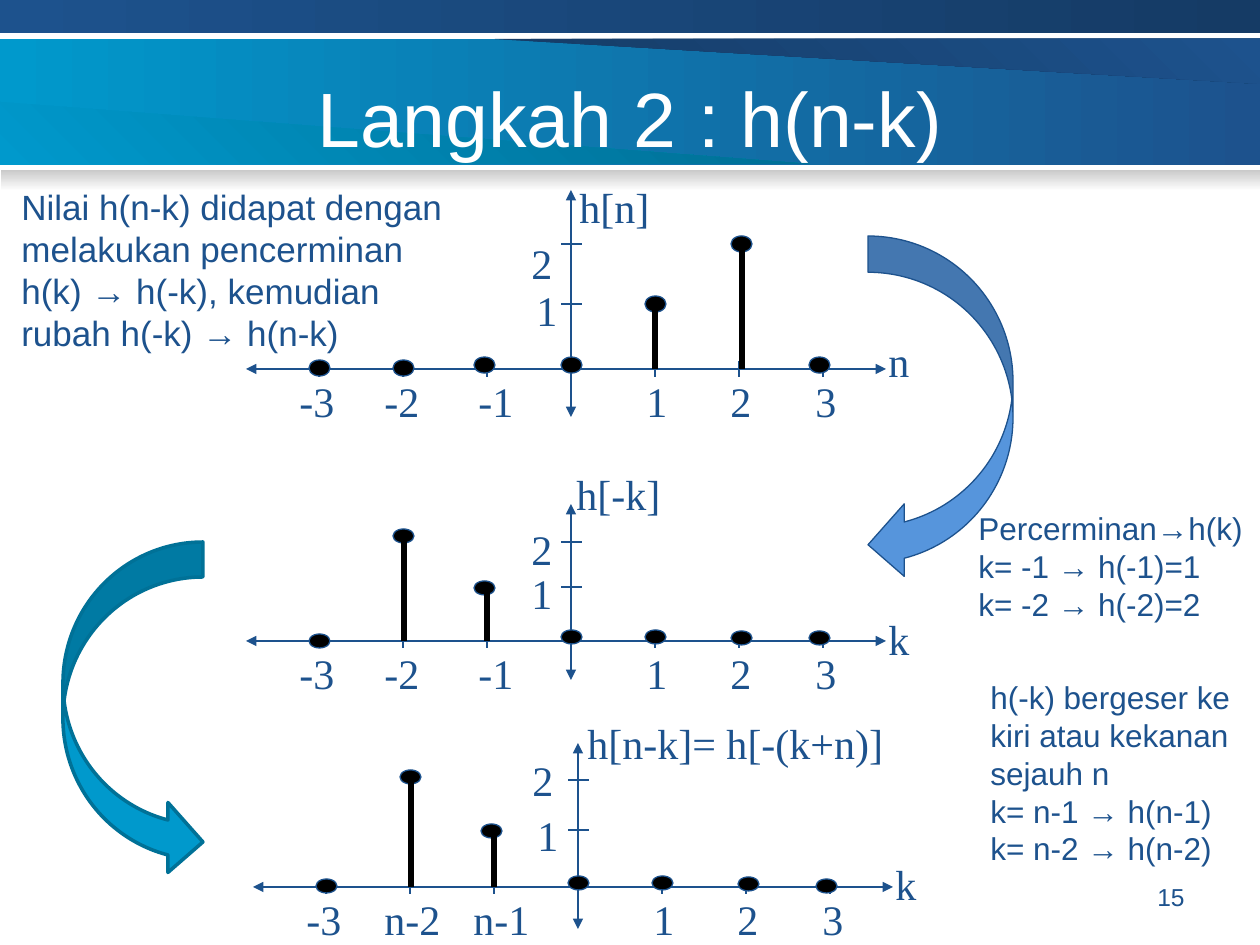
"""Build the slide on mirroring and shifting h(k) into h(n-k)."""
from lxml import etree
from pptx import Presentation
from pptx.dml.color import RGBColor
from pptx.enum.shapes import MSO_CONNECTOR, MSO_SHAPE
from pptx.enum.text import MSO_ANCHOR, MSO_AUTO_SIZE, PP_ALIGN
from pptx.oxml.ns import qn
from pptx.util import Emu, Pt

SCALE = 914400 / 126
NAVY = RGBColor(0x1D, 0x52, 0x8D)
DEEP = RGBColor(0x15, 0x3B, 0x65)
CYAN = RGBColor(0x00, 0x99, 0xCC)
TEAL = RGBColor(0x00, 0x6D, 0x92)
EDGE = RGBColor(0x00, 0x71, 0x97)
SKY = RGBColor(0x56, 0x95, 0xDC)
GREY = RGBColor(0xCA, 0xCA, 0xCA)
WHITE = RGBColor(0xFF, 0xFF, 0xFF)
BLACK = RGBColor(0x00, 0x00, 0x00)
SERIF = "Times New Roman"

deck = Presentation()
deck.slide_width, deck.slide_height = Emu(9144000), Emu(6858000)
page = deck.slides.add_slide(deck.slide_layouts[6])
shapes = page.shapes


def add_text(lines, area, size=24, font=SERIF, color=NAVY, align=PP_ALIGN.LEFT,
             anchor=MSO_ANCHOR.TOP):
    box = shapes.add_textbox(*[Emu(round(v * SCALE)) for v in area])
    frame = box.text_frame
    frame.word_wrap = True
    frame.vertical_anchor = anchor
    if anchor == MSO_ANCHOR.TOP:
        frame.auto_size = MSO_AUTO_SIZE.SHAPE_TO_FIT_TEXT
    frame.text = lines
    for para in frame.paragraphs:
        para.alignment = align
        para.font.size = Pt(size)
        para.font.name = font
        para.font.color.rgb = color


def add_line(ends, color=NAVY, width=0.75, arrows=False):
    line = shapes.add_connector(MSO_CONNECTOR.STRAIGHT,
                                *[Emu(round(v * SCALE)) for v in ends])
    line.line.color.rgb = color
    line.line.width = Pt(width)
    props = line._element.spPr
    if arrows:
        for tag in ("a:headEnd", "a:tailEnd"):
            etree.SubElement(props.find(qn("a:ln")), qn(tag), type="triangle")
    etree.SubElement(props, qn("a:effectLst"))


bands = [
    ([(0, 39), (1261, 39), (1261, 165), (0, 165)], CYAN, NAVY, 0),
    ([(1237, 39), (495, 39), (1261, 84), (1261, 39)], DEEP, NAVY, 45),
    ([(24, 164), (810, 164), (0, 102), (0, 164)], CYAN, TEAL, 45),
    ([(0, 0), (1260, 0), (1260, 33), (0, 33)], NAVY, DEEP, 0),
    ([(1, 170), (1260, 170), (1260, 191), (1, 191)], GREY, WHITE, 270),
]
for points, start, end, angle in bands:
    if points[0][0] == points[3][0]:
        (left, top), (right, bottom) = points[0], points[2]
        band = shapes.add_shape(MSO_SHAPE.RECTANGLE, *[
            Emu(round(v * SCALE)) for v in (left, top, right - left, bottom - top)])
    else:
        outline = shapes.build_freeform(*points[0], scale=SCALE)
        outline.add_line_segments(points[1:], close=True)
        band = outline.convert_to_shape()
    band.shadow.inherit = False
    band.line.fill.background()
    band.fill.gradient()
    band.fill.gradient_angle = angle
    for stop, color, position in zip(band.fill.gradient_stops, (start, end), (0, 1)):
        stop.color.rgb = color
        stop.position = position

add_text("Langkah 2 : h(n-k)", (63, 38, 1134, 157), 44, "Arial", WHITE,
         PP_ALIGN.CENTER, MSO_ANCHOR.MIDDLE)
add_text("15", (903, 876, 294, 50), 14, "Arial", align=PP_ALIGN.RIGHT)

arrows = [
    (MSO_SHAPE.CURVED_RIGHT_ARROW, (63, 542, 140, 335), CYAN, EDGE, 2),
    (MSO_SHAPE.CURVED_LEFT_ARROW, (868, 236, 145, 345), SKY, NAVY, 0.75),
]
for kind, area, fill, edge, width in arrows:
    arrow = shapes.add_shape(kind, *[Emu(round(v * SCALE)) for v in area])
    arrow.shadow.inherit = False
    arrow.fill.solid()
    arrow.fill.fore_color.rgb = fill
    arrow.line.color.rgb = edge
    arrow.line.width = Pt(width)

STEP = 84
LABEL_WIDTHS = {1: 42, 2: 63, 3: 88}
DOT_OFFSETS = (-262, -178, -97, -10, 74, 160, 238)
plots = [
    dict(origin=571, axis=369, top=190, bottom=417, height=48, dot=16,
         title=("h[n]", 567, 175, 105), name=("n", 329),
         negatives=[("-2", -199), ("-1", -105)],
         values=[("1", 304, 524, 278), ("2", 244, 519, 231)],
         dots=(360, 360, 357, 357, 296, 236, 357),
         stems=[(84, 304), (171, 247)]),
    dict(origin=571, axis=641, top=504, bottom=680, height=40, dot=14,
         title=("h[-k]", 564, 462, 126), name=("k", 607),
         negatives=[("-2", -199), ("-1", -105)],
         values=[("1", 587, 519, 561), ("2", 542, 519, 517)],
         dots=(634, 529, 581, 630, 630, 631, 631),
         stems=[(-167, 534), (-84, 586)]),
    dict(origin=578, axis=887, top=743, bottom=929, height=42, dot=14,
         title=("h[n-k]= h[-(k+n)]", 575, 711, 352), name=("k", 852),
         negatives=[("n-2", -206), ("n-1", -117)],
         values=[("1", 830, 525, 803), ("2", 780, 520, 748)],
         dots=(879, 770, 824, 876, 876, 877, 879),
         stems=[(-167, 775), (-84, 830)]),
]
for plot in plots:
    origin, axis, height = plot["origin"], plot["axis"], plot["height"]
    title, left, top, width = plot["title"]
    add_text(title, (left, top, width, height))
    name, top = plot["name"]
    add_text(name, (origin + 305, top, 42, height))
    add_line((origin - 325, axis, origin + 315, axis), arrows=True)
    add_line((origin, plot["top"], origin, plot["bottom"]), arrows=True)
    for k in (-3, -2, -1, 1, 2, 3):
        x = origin + k * STEP
        add_line((x, axis - plot["dot"] // 2, x, axis + plot["dot"] // 2))
    labels = [("-3", -284), *plot["negatives"], ("1", 63), ("2", 147), ("3", 232)]
    for text, offset in labels:
        add_text(text, (origin + offset, axis, LABEL_WIDTHS[len(text)], height))
    for text, y, left, top in plot["values"]:
        add_line((origin + 11, y, origin - 10, y))
        add_text(text, (left, top, 42, height))
    for offset, top in zip(DOT_OFFSETS, plot["dots"]):
        area = (origin + offset, top, 21, plot["dot"])
        dot = shapes.add_shape(MSO_SHAPE.OVAL, *[Emu(round(v * SCALE)) for v in area])
        dot.shadow.inherit = False
        dot.fill.solid()
        dot.fill.fore_color.rgb = BLACK
        dot.line.color.rgb = NAVY
        dot.line.width = Pt(0.75)
    for offset, top in plot["stems"]:
        add_line((origin + offset, top, origin + offset, axis), BLACK, 3)

add_text("Percerminan→h(k)\nk= -1 → h(-1)=1\nk= -2 → h(-2)=2",
         (966, 503, 305, 165), 18, "Arial")
add_text("h(-k) bergeser ke kiri atau kekanan sejauh n\n"
         "k= n-1 → h(n-1)\nk= n-2 → h(n-2)", (978, 672, 277, 242), 18, "Arial")
add_text("Nilai h(n-k) didapat dengan melakukan pencerminan h(k) → h(-k), "
         "kemudian rubah h(-k) → h(n-k)", (9, 179, 464, 224), 20, "Arial")

deck.save("out.pptx")
